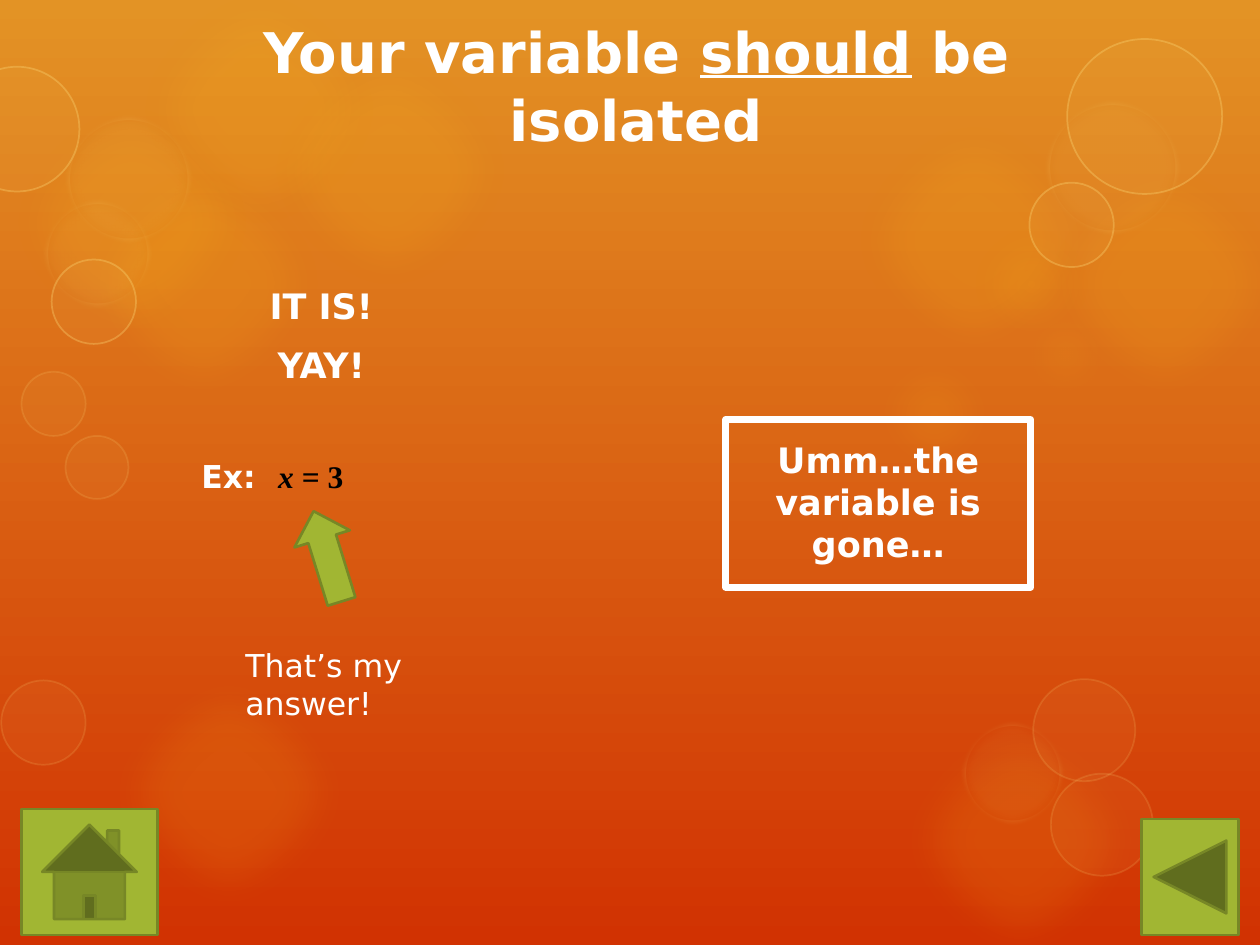
from pptx import Presentation
from pptx.dml.color import RGBColor
from pptx.enum.shapes import MSO_SHAPE as Shape
from pptx.enum.text import MSO_ANCHOR as Anchor, PP_ALIGN as Align
from pptx.oxml.ns import qn
from pptx.oxml.xmlchemy import OxmlElement
from pptx.util import Inches, Pt

AMBER = RGBColor(0xFD, 0xC6, 0x1B)
YELLOW = RGBColor(0xFF, 0xE2, 0x81)
SKY = RGBColor(0xE3, 0x93, 0x25)
EMBER = RGBColor(0xD1, 0x32, 0x02)
GREEN = RGBColor(0xA1, 0xB6, 0x33)
OLIVE = RGBColor(0x77, 0x87, 0x26)
WHITE = RGBColor(0xFF, 0xFF, 0xFF)
BLACK = RGBColor(0, 0, 0)

SANS = {"name": "DejaVu Sans", "color": WHITE}
MATH = {"name": "Times New Roman", "color": BLACK, "size": Pt(18), "bold": True}

GLOWS = [
    (0.57, 1.2, 2.09), (2.05, 0.31, 2.09), (1.01, -0.18, 2.09), (0, 0.72, 2.09),
    (8.2, 1.2, 2.09), (6.69, 0.86, 2.09), (0.77, 5.24, 2.09), (7.06, 5.62, 2.09),
    (7.52, 1.59, 1.33), (7.89, 2.24, 1.14), (6.75, 2.62, 1.33),
]
UPPER_RINGS = [(-0.36, 0.53, 0.99), (0.41, 2.06, 0.67), (8.47, 0.31, 1.23), (8.17, 1.45, 0.67)]
LOWER_RINGS = [
    (0.01, 5.4, 0.67), (8.34, 6.14, 0.81), (8.2, 5.39, 0.81), (0.17, 2.95, 0.51),
    (0.52, 3.46, 0.5),
]
HAZE = [(0.52, 0.92, 1), (0.35, 1.59, 0.85), (8.3, 0.8, 1.06), (7.63, 5.73, 0.81)]
BUBBLE_GROUPS = [
    (GLOWS, AMBER, 12, None, 0.3),
    (LOWER_RINGS, YELLOW, 5, (YELLOW, 1, 15), 0),
    (UPPER_RINGS, YELLOW, 5, (YELLOW, 1, 30), 0),
    (HAZE, YELLOW, 5, (YELLOW, 5, 25), 0.07),
]


def add_child(parent, tag, **values):
    """Append an XML element with the given attributes."""
    child = OxmlElement(tag)
    for name, value in values.items():
        child.set(name, str(value))
    parent.append(child)
    return child


def add_preset(page, kind, box, fill=GREEN, line=OLIVE, width=1.5):
    """Add a flat preset shape, in the button colours by default."""
    shape = page.shapes.add_shape(kind, *map(Inches, box))
    shape.shadow.inherit = False
    if fill is None:
        shape.fill.background()
    else:
        shape.fill.solid()
        shape.fill.fore_color.rgb = fill
    if line is None:
        shape.line.fill.background()
    else:
        shape.line.color.rgb = line
        shape.line.width = Pt(width)
    return shape


def add_bubble(page, box, fill, opacity, line, soft):
    """Add one translucent circle with an optional outline and soft edge."""
    left, top, size = box
    color, width, line_opacity = line or (None, 0, 0)
    bubble = add_preset(page, Shape.OVAL, (left, top, size, size), fill, color, width)
    properties = bubble._element.spPr
    for tint, share in zip(properties.iter(qn("a:srgbClr")), (opacity, line_opacity)):
        add_child(tint, "a:alpha", val=share * 1000)
    if soft:
        add_child(properties.find(qn("a:effectLst")), "a:softEdge", rad=Inches(soft))


def add_backdrop(page):
    """Fill the page with the gradient and its bubbles."""
    fill = page.background.fill
    fill.gradient()
    fill.gradient_angle = 270
    for stop, color in zip(fill.gradient_stops, (SKY, EMBER)):
        stop.color.rgb = color
    for boxes, *look in BUBBLE_GROUPS:
        for box in boxes:
            add_bubble(page, box, *look)


def add_text(page, box, paras, align=Align.LEFT, anchor=Anchor.TOP, spacing=(0, 0)):
    """Write paragraphs of (text, format) spans in a box."""
    frame = page.shapes.add_textbox(*map(Inches, box)).text_frame
    frame.word_wrap = True
    frame.vertical_anchor = anchor
    for index, spans in enumerate(paras):
        para = frame.paragraphs[0] if index == 0 else frame.add_paragraph()
        para.alignment = align
        para.space_before, para.space_after = map(Pt, spacing)
        for text, style in spans:
            span = para.add_run()
            span.text = text
            for name, value in style.items():
                if name == "color":
                    span.font.color.rgb = value
                else:
                    setattr(span.font, name, value)
    return frame


def add_title(page, box):
    """Write the title with its underlined word."""
    style = {**SANS, "size": Pt(32), "bold": True}
    spans = [("Your variable ", style), ("should", {**style, "underline": True}),
             (" be isolated", style)]
    add_text(page, box, [spans], Align.CENTER, Anchor.MIDDLE)


def add_example(page, left, top):
    """Place the cheer, the solved equation, its arrow and the remark."""
    strong = {**SANS, "size": Pt(20), "bold": True}
    plain = {**SANS, "size": Pt(18)}
    add_text(page, (left, top, 2.9, 1.36), [[("IT IS!", strong)], [("YAY!", strong)]],
             Align.CENTER, Anchor.MIDDLE, (4, 6))
    equation = add_text(page, (left + 0.4, top + 1.6, 1.75, 0.4), [[
        ("Ex:\t", {**plain, "bold": True}), ("x", {**MATH, "italic": True}), (" = 3", MATH)]])
    tabs = add_child(equation.paragraphs[0]._p.get_or_add_pPr(), "a:tabLst")
    add_child(tabs, "a:tab", pos=Inches(0.61), algn="l")
    arrow = add_preset(page, Shape.UP_ARROW, (left + 1.27, top + 2.06, 0.46, 0.75))
    arrow.rotation = 342.8
    add_text(page, (left + 0.75, top + 3.1, 1.5, 0.71), [[("That’s my answer!", plain)]])


def add_choice(page, left, top):
    """Place the framed answer button."""
    style = {**SANS, "size": Pt(20), "bold": True}
    add_text(page, (left, top + 0.1, 2.42, 1.11), [[("Umm…the variable is gone…", style)]],
             Align.CENTER)
    add_preset(page, Shape.ACTION_BUTTON_CUSTOM, (left, top, 2.42, 1.33), None, WHITE, 4)


def main():
    """Build and save the deck."""
    deck = Presentation()
    deck.slide_width, deck.slide_height = Inches(10), Inches(7.5)
    page = deck.slides.add_slide(deck.slide_layouts[6])
    add_backdrop(page)
    add_title(page, (1.02, 0.17, 8.06, 1.01))
    add_example(page, 1.1, 1.98)
    add_choice(page, 5.76, 3.33)
    add_preset(page, Shape.ACTION_BUTTON_BACK_OR_PREVIOUS, (9.06, 6.5, 0.77, 0.92))
    add_preset(page, Shape.ACTION_BUTTON_HOME, (0.17, 6.42, 1.08, 1))
    deck.save("out.pptx")


if __name__ == "__main__":
    main()
